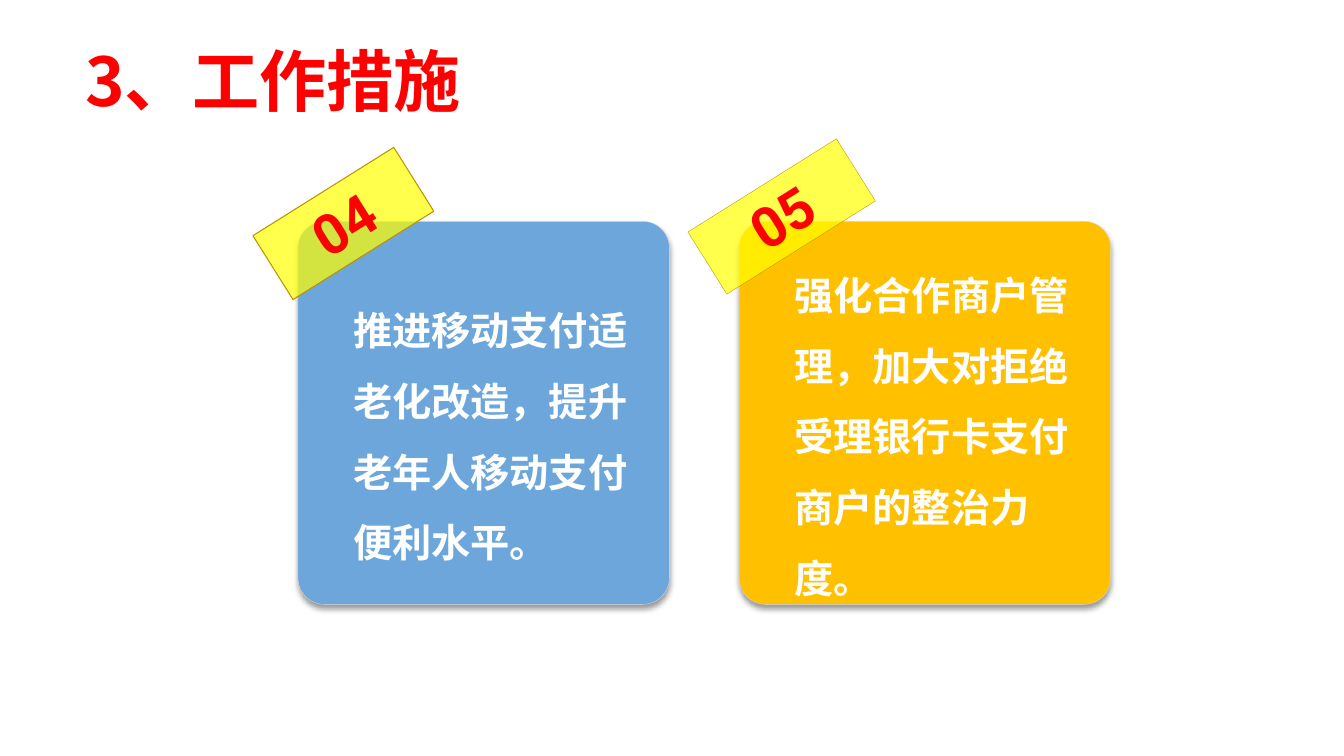
from lxml.etree import SubElement
from pptx import Presentation
from pptx.dml.color import RGBColor
from pptx.enum.shapes import MSO_SHAPE
from pptx.enum.text import MSO_ANCHOR, MSO_AUTO_SIZE, PP_ALIGN
from pptx.oxml.ns import qn
from pptx.util import Cm, Pt

HEX = {
    "red": "FF0000", "white": "FFFFFF", "blue": "6CA6DA", "gold": "FFC000",
    "yellow": "FFFF00", "brown": "BF9000", "grey": "D9D9D9", "black": "000000",
}
HAN = "Noto Sans CJK SC"
LATIN = "Roboto"


def color(name):
    return RGBColor.from_string(HEX[name])


def put_text(shape, text, size, font=HAN, ink="red", align=PP_ALIGN.LEFT,
             space=None, anchor=MSO_ANCHOR.TOP):
    frame = shape.text_frame
    frame.word_wrap = True
    frame.vertical_anchor = anchor
    para = frame.paragraphs[0]
    para.alignment = align
    para.line_spacing = space
    # Keep punctuation inside the margin
    para._p.get_or_add_pPr().set("hangingPunct", "0")
    run = para.add_run()
    run.text = text
    run.font.size = Pt(size)
    run.font.bold = True
    run.font.name = font
    run.font.color.rgb = color(ink)
    # East Asian typeface
    SubElement(run.font._element, qn("a:ea"), typeface=font)
    return frame


def add_box(shapes, kind, box, fill, line, width):
    shape = shapes.add_shape(kind, *map(Cm, box))
    shape.fill.solid()
    shape.fill.fore_color.rgb = color(fill)
    shape.line.color.rgb = color(line)
    shape.line.width = Pt(width)
    shape.shadow.inherit = False
    return shape


def add_shade(shape):
    effects = shape.element.spPr.find(qn("a:effectLst"))
    shade = SubElement(effects, qn("a:outerShdw"), blurRad=str(Pt(4)),
                       dist=str(Pt(3)), dir="5400000", algn="t",
                       rotWithShape="0")
    tint = SubElement(shade, qn("a:srgbClr"), val=HEX["black"])
    SubElement(tint, qn("a:alpha"), val="40000")


def add_card(shapes, left, fill, text):
    card = add_box(shapes, MSO_SHAPE.ROUNDED_RECTANGLE,
                   (left, 5.58, 9.36, 9.65), fill, "grey", 0.25)
    card.adjustments[0] = 0.071
    add_shade(card)
    frame = put_text(card, text, 28, ink="white", space=1.5,
                     anchor=MSO_ANCHOR.MIDDLE)
    frame.margin_left, frame.margin_top = Cm(1.2), Cm(0.71)
    frame.margin_right, frame.margin_bottom = Cm(0.25), Cm(0.13)


def add_tag(shapes, box, width, text):
    tag = add_box(shapes, MSO_SHAPE.RECTANGLE, box, "yellow", "brown", width)
    tag.rotation = 327.9
    # See-through fill
    tint = tag.element.spPr.find(qn("a:solidFill")).find(qn("a:srgbClr"))
    SubElement(tint, qn("a:alpha"), val="70000")
    put_text(tag, text, 40, font=LATIN, align=PP_ALIGN.CENTER,
             anchor=MSO_ANCHOR.MIDDLE)


def add_title(shapes, text):
    title = shapes.add_textbox(Cm(1.9), Cm(0.86), Cm(12.57), Cm(2.31))
    frame = put_text(title, text, 48)
    frame.auto_size = MSO_AUTO_SIZE.SHAPE_TO_FIT_TEXT


def main():
    deck = Presentation()
    deck.slide_width, deck.slide_height = Cm(33.87), Cm(19.05)
    slide = deck.slides.add_slide(deck.slide_layouts[6])

    # Heading
    add_title(slide.shapes, "3、工作措施")

    # Numbered measures
    items = [
        (7.51, "blue", "推进移动支付适老化改造，提升老年人移动支付便利水平。",
         (6.56, 4.68, 4.19, 1.9), 0.75, "04"),
        (18.63, "gold", "强化合作商户管理，加大对拒绝受理银行卡支付商户的整治力度。",
         (17.49, 4.53, 4.42, 1.85), 0.25, "05"),
    ]
    for left, fill, text, box, width, number in items:
        group = slide.shapes.add_group_shape()
        add_card(group.shapes, left, fill, text)
        add_tag(group.shapes, box, width, number)

    deck.save("out.pptx")


if __name__ == "__main__":
    main()
